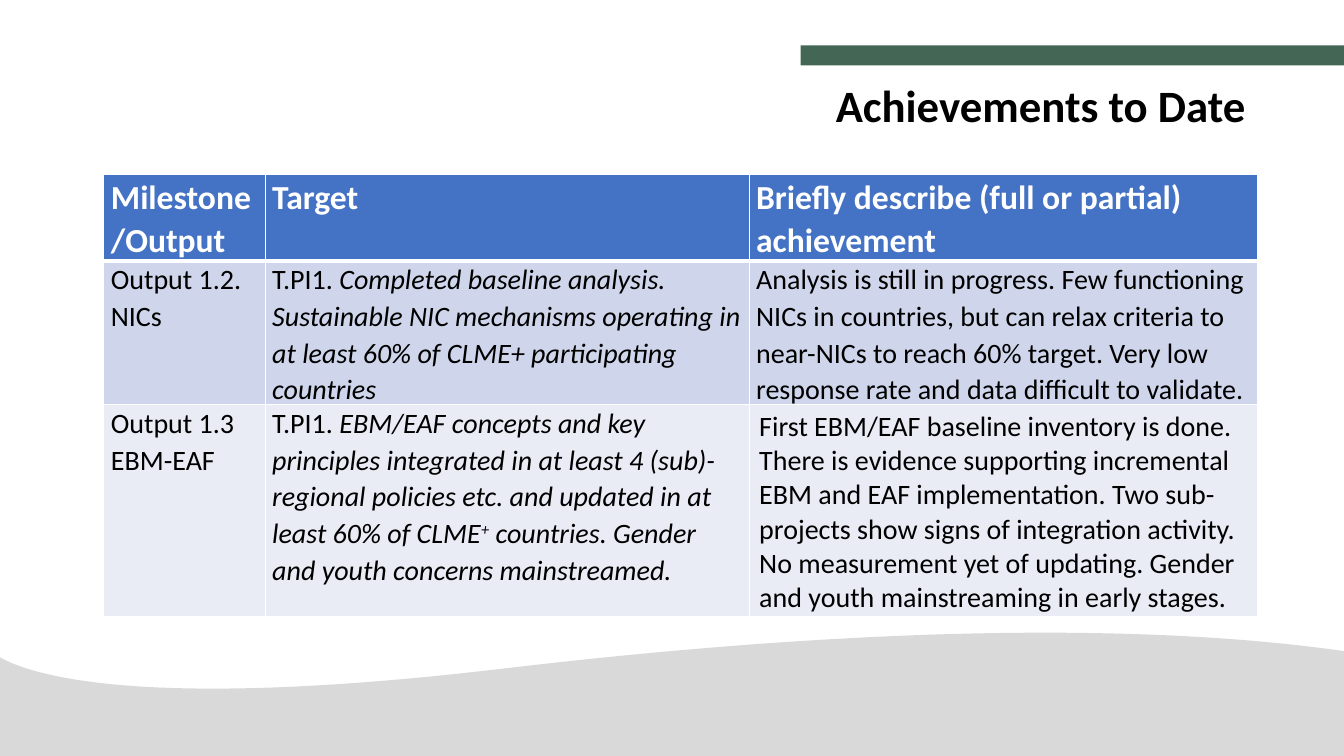
from dataclasses import dataclass, field
from typing import Any

from lxml.etree import SubElement
from pptx import Presentation
from pptx.dml.color import RGBColor
from pptx.enum.shapes import MSO_SHAPE
from pptx.enum.text import MSO_ANCHOR, MSO_AUTO_SIZE, PP_ALIGN
from pptx.oxml.ns import qn
from pptx.util import Inches, Pt

COLORS = {
    "wave": "D9D9D9",
    "bar": "436655",
    "header": "4472C4",
    "band_dark": "CFD5EA",
    "band_light": "E9EBF5",
    "white": "FFFFFF",
    "black": "000000",
}
TITLE_FONT = {"name": "Calibri", "size": Pt(32), "bold": True}
HEADER_FONT = {"name": "Calibri", "size": Pt(24), "bold": True}
BODY_FONT = {"name": "Calibri", "size": Pt(20), "bold": False}
TIGHT_MARGINS = {
    "margin_left": Inches(0.07),
    "margin_right": Inches(0.07),
    "margin_top": 0,
    "margin_bottom": 0,
}
COLUMN_WIDTHS = (1.6, 4.8, 5.04)
ROW_HEIGHT = 0.41
Point = tuple[float, float]


@dataclass
class Span:
    text: str
    italic: bool = False
    superscript: bool = False


@dataclass
class Entry:
    spans: list[Span]
    line_spacing: float | None = 1.07
    margins: dict[str, int] = field(default_factory=lambda: TIGHT_MARGINS)


@dataclass
class Row:
    entries: list[Entry]
    fill: str
    text_color: str
    font: dict[str, Any]
    bottom_border: float = 1


ROWS = [
    Row(
        [
            Entry([Span("Milestone/Output")]),
            Entry([Span("Target")]),
            Entry([Span("Briefly describe (full or partial) achievement")]),
        ],
        "header", "white", HEADER_FONT, bottom_border=3,
    ),
    Row(
        [
            Entry([Span("Output 1.2. NICs")]),
            Entry([
                Span("T.PI1. "),
                Span("Completed baseline analysis. Sustainable NIC mechanisms operating "
                     "in at least 60% of CLME+ participating countries", italic=True),
            ]),
            Entry([Span("Analysis is still in progress. Few functioning NICs in countries, "
                        "but can relax criteria to near-NICs to reach 60% target. Very low "
                        "response rate and data difficult to validate.")]),
        ],
        "band_dark", "black", BODY_FONT,
    ),
    Row(
        [
            Entry([Span("Output 1.3 EBM-EAF")]),
            Entry([
                Span("T.PI1."),
                Span(" EBM/EAF concepts and key principles integrated in at least 4 "
                     "(sub)-regional policies etc. and updated in at least 60% of CLME",
                     italic=True),
                Span("+", italic=True, superscript=True),
                Span(" countries. Gender and youth concerns mainstreamed.", italic=True),
            ]),
            Entry([Span("First EBM/EAF baseline inventory is done. There is evidence "
                        "supporting incremental EBM and EAF implementation. Two "
                        "sub-projects show signs of integration activity. No measurement "
                        "yet of updating. Gender and youth mainstreaming in early stages.")],
                  line_spacing=None, margins={}),
        ],
        "band_light", "black", BODY_FONT,
    ),
]


def color(name: str) -> RGBColor:
    return RGBColor.from_string(COLORS[name])


def apply_format(target: Any, values: dict[str, Any]) -> None:
    for name, value in values.items():
        setattr(target, name, value)


def paint(shape: Any, fill: str) -> None:
    shape.shadow.inherit = False
    shape.fill.solid()
    shape.fill.fore_color.rgb = color(fill)
    shape.line.fill.background()


def bezier(start: Point, *controls: Point, steps: int = 40) -> list[Point]:
    """Points after start along a cubic curve given by two controls and its end."""
    points = (start, *controls)
    curve = []
    for step in range(1, steps + 1):
        t = step / steps
        weights = ((1 - t) ** 3, 3 * t * (1 - t) ** 2, 3 * t * t * (1 - t), t ** 3)
        curve.append(tuple(sum(w * p[axis] for w, p in zip(weights, points))
                           for axis in (0, 1)))
    return curve


def add_wave(slide: Any) -> None:
    right, crest, left = (13.33, 6.46), (5.02, 6.63), (-0.02, 6.51)
    outline = [
        right,
        *bezier(right, (11.65, 6.22), (9.02, 6.16), crest),
        *bezier(crest, (1.33, 7.07), (0.26, 6.68), left),
        (-0.02, 7.5),
    ]
    builder = slide.shapes.build_freeform(Inches(13.33), Inches(7.5))
    builder.add_line_segments([(Inches(x), Inches(y)) for x, y in outline])
    paint(builder.convert_to_shape(), "wave")


def add_bar(slide: Any) -> None:
    bar = slide.shapes.add_shape(MSO_SHAPE.RECTANGLE, Inches(7.94), Inches(0.45),
                                 Inches(5.4), Inches(0.2))
    paint(bar, "bar")


def add_title(slide: Any) -> None:
    title = slide.shapes.title
    apply_format(title, {"left": Inches(8.13), "top": Inches(0.72),
                         "width": Inches(4.9), "height": Inches(0.64)})
    title.text = "Achievements to Date"
    apply_format(title.text_frame, {"word_wrap": True, "margin_left": Inches(0.16),
                                    "vertical_anchor": MSO_ANCHOR.TOP,
                                    "auto_size": MSO_AUTO_SIZE.SHAPE_TO_FIT_TEXT})
    heading = title.text_frame.paragraphs[0]
    heading.alignment = PP_ALIGN.LEFT
    apply_format(heading.runs[0].font, TITLE_FONT)
    heading.runs[0].font.color.rgb = color("black")


def add_borders(cell: Any, bottom: float) -> None:
    properties = cell._tc.get_or_add_tcPr()
    widths = {"a:lnL": 1, "a:lnR": 1, "a:lnT": 1, "a:lnB": bottom}
    for position, (side, width) in enumerate(widths.items()):
        border = SubElement(properties, qn(side), w=str(Pt(width)))
        fill = SubElement(border, qn("a:solidFill"))
        SubElement(fill, qn("a:srgbClr"), val=COLORS["white"])
        properties.insert(position, border)


def fill_cell(cell: Any, entry: Entry, row: Row) -> None:
    cell.fill.solid()
    cell.fill.fore_color.rgb = color(row.fill)
    add_borders(cell, row.bottom_border)
    apply_format(cell, entry.margins)
    paragraph = cell.text_frame.paragraphs[0]
    paragraph.line_spacing = entry.line_spacing
    for span in entry.spans:
        run = paragraph.add_run()
        run.text = span.text
        apply_format(run.font, {**row.font, "italic": span.italic})
        run.font.color.rgb = color(row.text_color)
        if span.superscript:
            run._r.get_or_add_rPr().set("baseline", "30000")


def add_achievements(slide: Any) -> None:
    frame = slide.shapes.add_table(len(ROWS), len(COLUMN_WIDTHS), Inches(1.03),
                                   Inches(1.73), Inches(11.44), Inches(4.35))
    for column, width in zip(frame.table.columns, COLUMN_WIDTHS):
        column.width = Inches(width)
    for table_row, row in zip(frame.table.rows, ROWS):
        table_row.height = Inches(ROW_HEIGHT)
        for cell, entry in zip(table_row.cells, row.entries):
            fill_cell(cell, entry, row)
    frame.height = Inches(4.35)


def main() -> None:
    deck = Presentation()
    apply_format(deck, {"slide_width": Inches(13.33), "slide_height": Inches(7.5)})
    slide = deck.slides.add_slide(deck.slide_layouts[5])
    add_wave(slide)
    add_bar(slide)
    add_title(slide)
    add_achievements(slide)
    deck.save("out.pptx")


if __name__ == "__main__":
    main()
